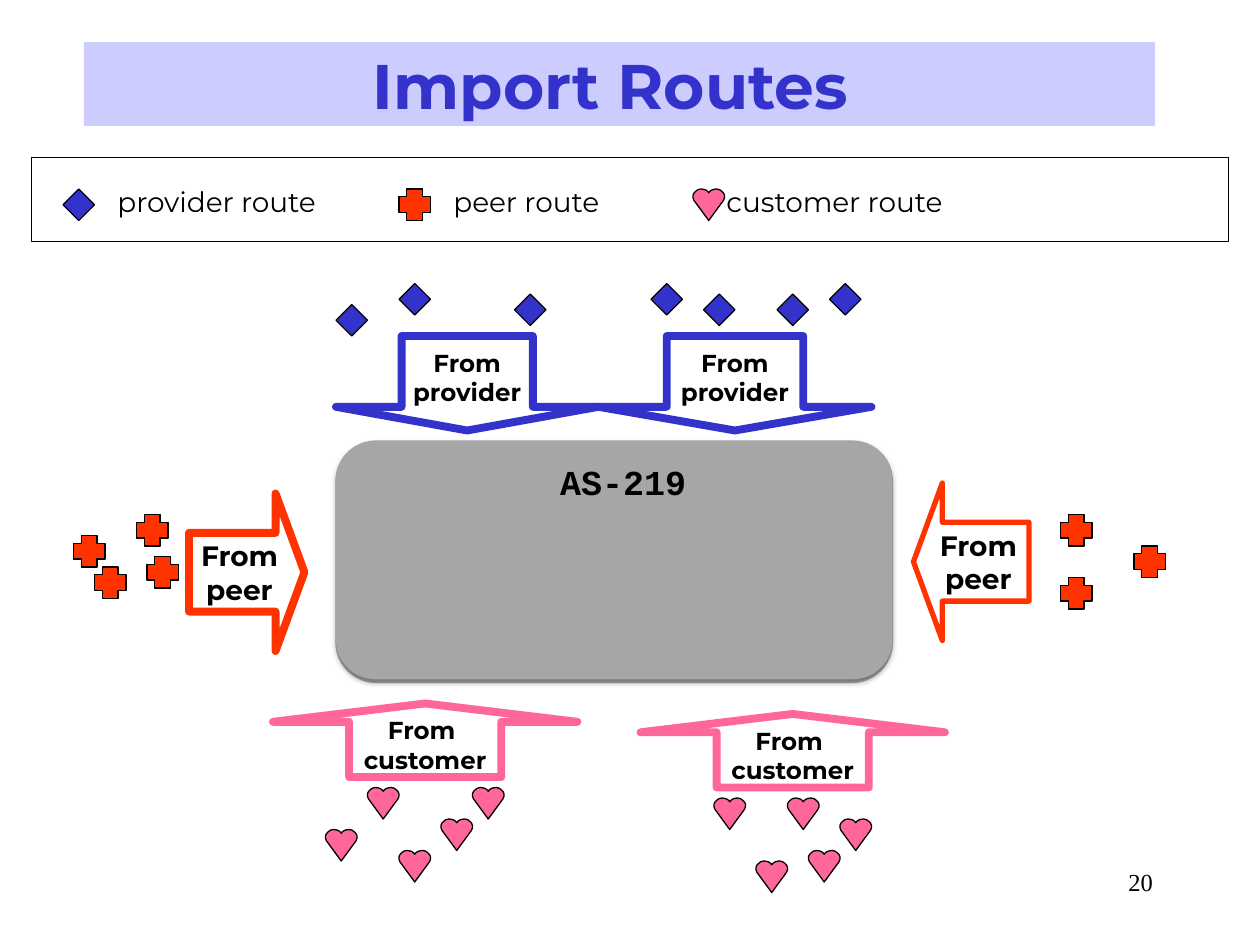
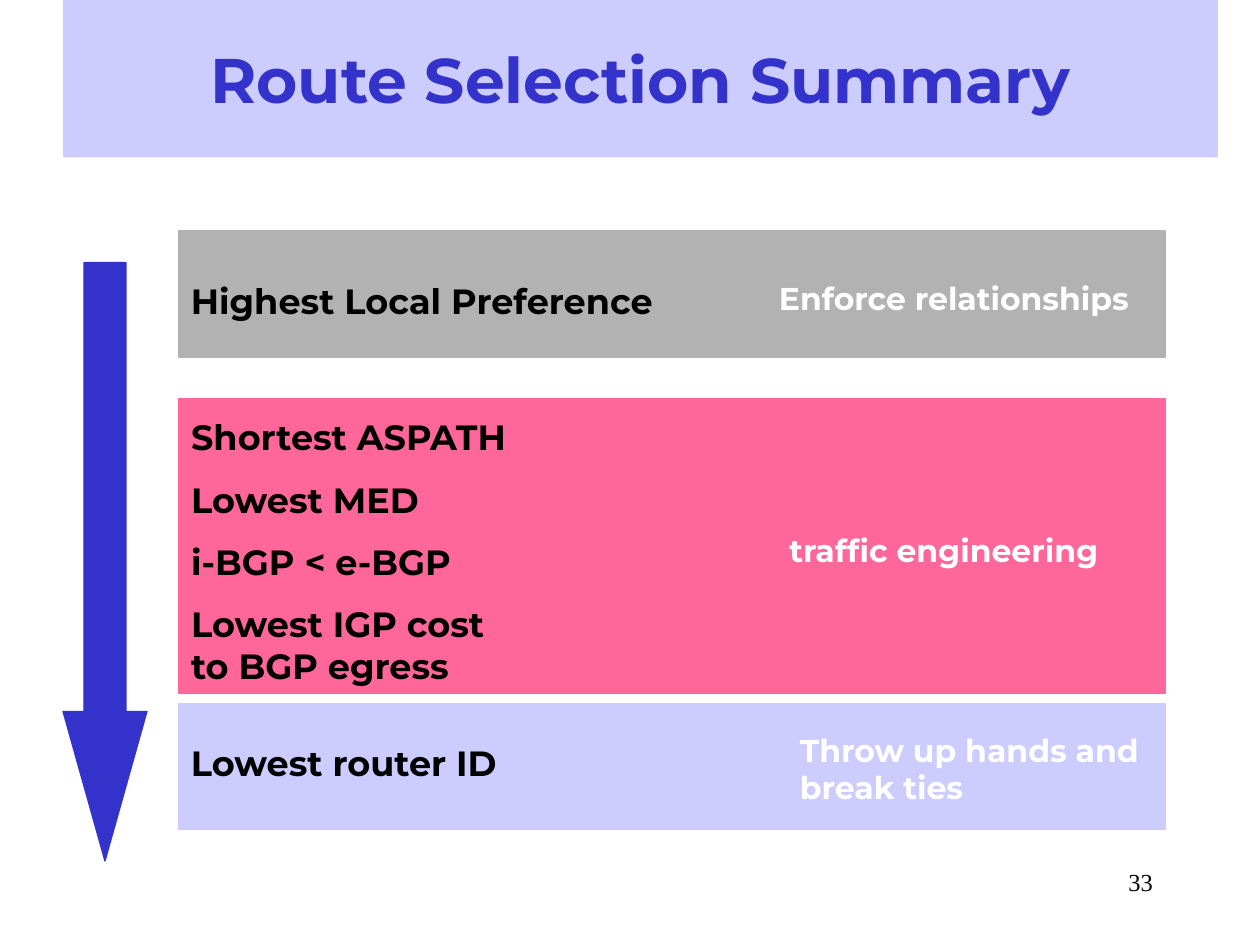
from dataclasses import dataclass

from lxml.etree import SubElement
from pptx import Presentation
from pptx.dml.color import RGBColor
from pptx.enum.shapes import MSO_SHAPE
from pptx.enum.text import MSO_ANCHOR, MSO_AUTO_SIZE, PP_ALIGN
from pptx.oxml.ns import qn
from pptx.util import Cm, Pt


@dataclass(frozen=True)
class Theme:
    black: str = "000000"
    white: str = "FFFFFF"
    blue: str = "3333CC"
    lavender: str = "CCCCFF"
    red: str = "FF3300"
    pink: str = "FF6699"
    silver: str = "B2B2B2"
    grey: str = "A6A6A6"
    sans: str = "Montserrat"
    serif: str = "Times New Roman"
    mono: str = "Courier New"
    title: int = 36
    criterion: int = 20
    reason: int = 18
    legend: int = 16
    small: int = 14
    hairline: float = 0.75
    thick: float = 4.5


THEME = Theme()
GRID_CM = 2.54 / 12
MARKER = 3
HEART_HALF = [(0.5, 0.12), (0.46, 0.07), (0.4, 0.03), (0.33, 0.01), (0.25, 0),
              (0.16, 0.02), (0.09, 0.07), (0.03, 0.13), (0, 0.2), (0, 0.28),
              (0.03, 0.36), (0.5, 1)]
HEART = HEART_HALF + [(1 - x, y) for x, y in HEART_HALF[-2:0:-1]]


def grid(*units):
    return [Cm(unit * GRID_CM) for unit in units]


def write_text(frame, text, size, color=THEME.black, font=THEME.sans, bold=True,
               align=PP_ALIGN.LEFT, anchor=MSO_ANCHOR.TOP, wrap=True, gap=0):
    frame.auto_size = MSO_AUTO_SIZE.NONE
    frame.word_wrap = wrap
    frame.vertical_anchor = anchor
    frame.text = text
    for paragraph in frame.paragraphs:
        paragraph.alignment = align
        paragraph.space_before = Pt(0)
        paragraph.space_after = Pt(gap)
        for run in paragraph.runs:
            run.font.size = Pt(size)
            run.font.name = font
            run.font.bold = bold
            run.font.color.rgb = RGBColor.from_string(color)


class RouteDeck:
    def __init__(self, theme):
        self.theme = theme
        self.presentation = Presentation()
        self.presentation.slide_width = Cm(25.4)
        self.presentation.slide_height = Cm(19.05)
        self.slide = None

    def start(self, layout, title, area, number):
        layouts = self.presentation.slide_layouts
        self.slide = self.presentation.slides.add_slide(layouts.get_by_name(layout))
        heading = self.slide.shapes.title
        self.place(heading, area)
        heading.fill.solid()
        heading.fill.fore_color.rgb = RGBColor.from_string(self.theme.lavender)
        write_text(heading.text_frame, title, self.theme.title, self.theme.blue,
                   align=PP_ALIGN.CENTER, anchor=MSO_ANCHOR.MIDDLE)
        self.label(number, (86, 82, 25, 6), self.theme.small, font=self.theme.serif,
                   bold=False, align=PP_ALIGN.RIGHT)

    def place(self, element, area):
        element.left, element.top, element.width, element.height = grid(*area)

    def paint(self, element, fill, line, weight):
        element.shadow.inherit = False
        element.fill.solid()
        element.fill.fore_color.rgb = RGBColor.from_string(fill)
        if line:
            element.line.color.rgb = RGBColor.from_string(line)
            element.line.width = Pt(weight)
        else:
            element.line.fill.background()
        return element

    def block(self, kind, area, fill, line=None, weight=THEME.hairline, adjust=()):
        element = self.slide.shapes.add_shape(kind, *grid(*area))
        for index, value in enumerate(adjust):
            element.adjustments[index] = value
        return self.paint(element, fill, line, weight)

    def label(self, text, area, size, **style):
        box = self.slide.shapes.add_textbox(*grid(*area))
        write_text(box.text_frame, text, size, **style)

    def criteria(self, items, area):
        body = self.slide.placeholders[1]
        self.place(body, area)
        write_text(body.text_frame, "\n".join(items), self.theme.criterion, gap=11.6)
        for paragraph in body.text_frame.paragraphs:
            properties = paragraph._p.get_or_add_pPr()
            properties.set("marL", "0")
            properties.set("indent", "0")
            SubElement(properties, qn("a:buNone"))

    def source_arrow(self, kind, text, area, color, size, weight=THEME.thick):
        arrow = self.block(kind, area, self.theme.white, color, weight, (0.5, 0.25))
        write_text(arrow.text_frame, text, size, align=PP_ALIGN.CENTER,
                   anchor=MSO_ANCHOR.MIDDLE, wrap=False)

    def provider_route(self, x, y):
        self.block(MSO_SHAPE.DIAMOND, (x, y, MARKER, MARKER), self.theme.blue,
                   self.theme.black)

    def peer_route(self, x, y):
        self.block(MSO_SHAPE.CROSS, (x, y, MARKER, MARKER), self.theme.red,
                   self.theme.black, adjust=(0.25,))

    def customer_route(self, x, y):
        outline = [grid(x + MARKER * u, y + MARKER * v) for u, v in HEART]
        builder = self.slide.shapes.build_freeform(*outline[0])
        builder.add_line_segments(outline[1:], close=True)
        self.paint(builder.convert_to_shape(), self.theme.pink, self.theme.black,
                   self.theme.hairline)

    def soft_shadow(self, element):
        effects = element._element.spPr.find(qn("a:effectLst"))
        shadow = SubElement(effects, qn("a:outerShdw"), blurRad=str(Pt(3.1)),
                            dist=str(Pt(1.8)), dir="5400000", rotWithShape="0")
        color = SubElement(shadow, qn("a:srgbClr"), val=self.theme.black)
        SubElement(color, qn("a:alpha"), val="35000")


def import_routes(deck):
    theme = deck.theme
    deck.start("Title Only", "Import Routes ", (8, 4, 102, 8), "20")

    deck.block(MSO_SHAPE.RECTANGLE, (3, 15, 114, 8), theme.white, theme.black)
    legend = [(deck.provider_route, 6, "provider route", 10),
              (deck.peer_route, 38, "peer route", 42),
              (deck.customer_route, 66, "customer route", 68)]
    for draw_route, marker_x, name, name_x in legend:
        draw_route(marker_x, 18)
        deck.label(name, (name_x, 17, 27, 4.4), theme.legend, bold=False)

    deck.block(MSO_SHAPE.ROUNDED_RECTANGLE, (32, 42, 53, 23), theme.silver,
               theme.silver)
    network = deck.block(MSO_SHAPE.ROUNDED_RECTANGLE, (32, 42, 53, 22.7), theme.grey)
    deck.soft_shadow(network)
    deck.label("AS-219", (50, 43.3, 18.7, 5.3), theme.criterion, font=theme.mono,
               align=PP_ALIGN.CENTER)

    for x, width in [(32, 25), (57, 26)]:
        deck.source_arrow(MSO_SHAPE.DOWN_ARROW, "From\nprovider", (x, 32, width, 9),
                          theme.blue, theme.small)
    for kind, x, y, weight in [(MSO_SHAPE.RIGHT_ARROW, 18, 47, theme.thick),
                               (MSO_SHAPE.LEFT_ARROW, 87, 46, 3)]:
        deck.source_arrow(kind, "From\npeer", (x, y, 11, 15), theme.red,
                          theme.legend, weight)
    for x, y in [(26, 67), (61, 68)]:
        deck.source_arrow(MSO_SHAPE.UP_ARROW, "From \ncustomer", (x, y, 29, 7),
                          theme.pink, theme.small)

    routes = {
        deck.provider_route: [(32, 29), (38, 27), (49, 28), (62, 27), (67, 28),
                              (74, 28), (79, 27)],
        deck.peer_route: [(7, 51), (9, 54), (13, 49), (14, 53), (101, 49),
                          (101, 55), (108, 52)],
        deck.customer_route: [(31, 79), (35, 75), (38, 81), (42, 78), (45, 75),
                              (68, 76), (72, 82), (75, 76), (77, 81), (80, 78)],
    }
    for draw_route, spots in routes.items():
        for spot in spots:
            draw_route(*spot)


def route_selection(deck):
    theme = deck.theme
    deck.start("Title and Content", "Route Selection Summary", (6, 0, 110, 15), "33")

    for y, height, color in [(22, 12, theme.silver), (38, 28, theme.pink),
                             (67, 12, theme.lavender)]:
        band = deck.block(MSO_SHAPE.RECTANGLE, (17, y, 94, height), color, color)
        deck.slide.shapes._spTree.insert(2, band._element)

    deck.criteria(["Shortest ASPATH", "Lowest MED", "i-BGP < e-BGP",
                   "Lowest IGP cost\vto BGP egress"], (17, 39, 50, 27))
    for criterion, y in [("Highest Local Preference", 26), ("Lowest router ID", 70)]:
        deck.label(criterion, (17, y, 54, 5.2), theme.criterion)
    for reason, x, y in [("Enforce relationships", 73, 26),
                         ("traffic engineering", 74, 50),
                         ("Throw up hands and\nbreak ties", 75, 69)]:
        deck.label(reason, (x, y, 40, 8.4), theme.reason, color=theme.white)
    deck.block(MSO_SHAPE.DOWN_ARROW, (6, 25, 8, 57), theme.blue, theme.blue,
               adjust=(0.5, 1.781))


def main():
    deck = RouteDeck(THEME)
    import_routes(deck)
    route_selection(deck)
    deck.presentation.save("out.pptx")


if __name__ == "__main__":
    main()
